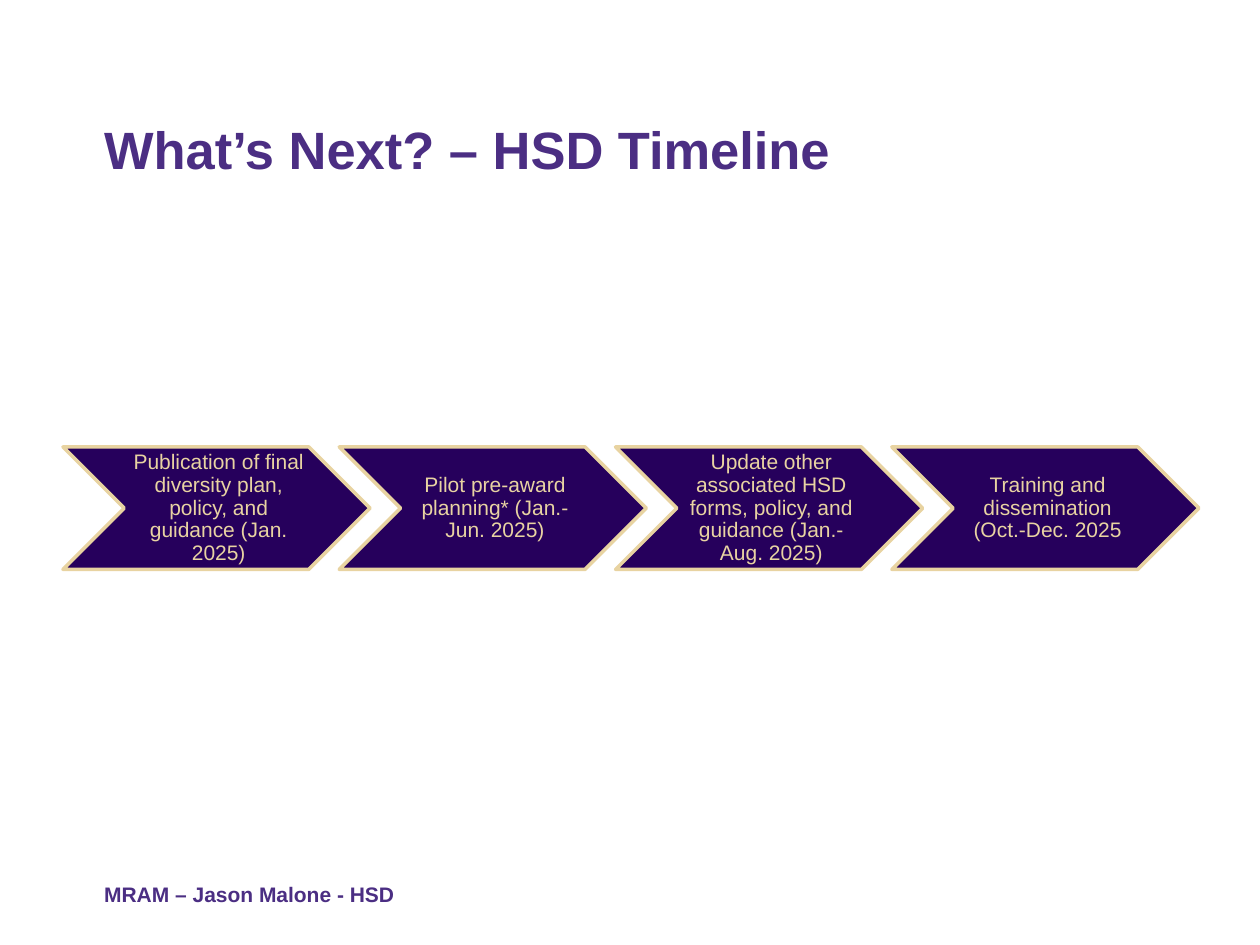
from pptx import Presentation
from pptx.dml.color import RGBColor
from pptx.enum.shapes import MSO_SHAPE
from pptx.enum.text import MSO_ANCHOR, PP_ALIGN
from pptx.util import Cm, Pt

CHEVRON = MSO_SHAPE.CHEVRON
BOTTOM, MIDDLE = MSO_ANCHOR.BOTTOM, MSO_ANCHOR.MIDDLE
LEFT, CENTER = PP_ALIGN.LEFT, PP_ALIGN.CENTER

COLORS = {"heading": "4B2E83", "step": "26005C", "outline": "E8D3A1", "label": "E8D3A2"}
STEPS = [
    "Publication of final diversity plan, policy, and guidance (Jan. 2025)",
    "Pilot pre-award planning* (Jan.-Jun. 2025)",
    "Update other associated HSD forms, policy, and guidance (Jan.-Aug. 2025)",
    "Training and dissemination (Oct.-Dec. 2025",
]
STEP_LEFT, STEP_TOP, STEP_PITCH = 1.27, 9.01, 5.57
STEP_WIDTH, STEP_HEIGHT = 6.19, 2.47


class TimelineSlide:
    """Draw the headings and steps of a timeline in one style."""

    font_name = "Arial"

    def __init__(self, slide):
        self.slide = slide

    def color(self, name):
        return RGBColor.from_string(COLORS[name])

    def set_text(self, shape, text, size, color, anchor, spacing, margins, align=LEFT, bold=False):
        frame = shape.text_frame
        frame.word_wrap = True
        frame.vertical_anchor = anchor
        frame.margin_left, frame.margin_top, frame.margin_right, frame.margin_bottom = map(Cm, margins)
        paragraph = frame.paragraphs[0]
        paragraph.text = text
        paragraph.alignment = align
        paragraph.line_spacing = spacing
        paragraph.font.name = self.font_name
        paragraph.font.size = Pt(size)
        paragraph.font.bold = bold
        paragraph.font.color.rgb = self.color(color)

    def heading(self, text, left, top, width, height, size, spacing):
        box = self.slide.shapes.add_textbox(Cm(left), Cm(top), Cm(width), Cm(height))
        self.set_text(box, text, size, "heading", BOTTOM, spacing, (0.25, 0.13, 0.25, 0.13), bold=True)

    def step(self, text, left, top, width, height):
        shape = self.slide.shapes.add_shape(CHEVRON, Cm(left), Cm(top), Cm(width), Cm(height))
        shape.shadow.inherit = False
        shape.fill.solid()
        shape.fill.fore_color.rgb = self.color("step")
        shape.line.color.rgb = self.color("outline")
        shape.line.width = Pt(2)
        self.set_text(shape, text, 12, "label", MIDDLE, 0.9, (0.13, 0.04, 0.04, 0.04), CENTER)


def main():
    presentation = Presentation()
    presentation.slide_width, presentation.slide_height = Cm(25.4), Cm(19.05)
    timeline = TimelineSlide(presentation.slides.add_slide(presentation.slide_layouts[6]))
    timeline.heading("What’s Next? – HSD Timeline", 1.85, 1.04, 22.73, 2.74, 30, 0.9)
    timeline.heading("MRAM – Jason Malone - HSD", 1.85, 17.5, 20.09, 0.91, 12, 1.5)
    for index, text in enumerate(STEPS):
        timeline.step(text, STEP_LEFT + index * STEP_PITCH, STEP_TOP, STEP_WIDTH, STEP_HEIGHT)
    presentation.save("out.pptx")


if __name__ == "__main__":
    main()
